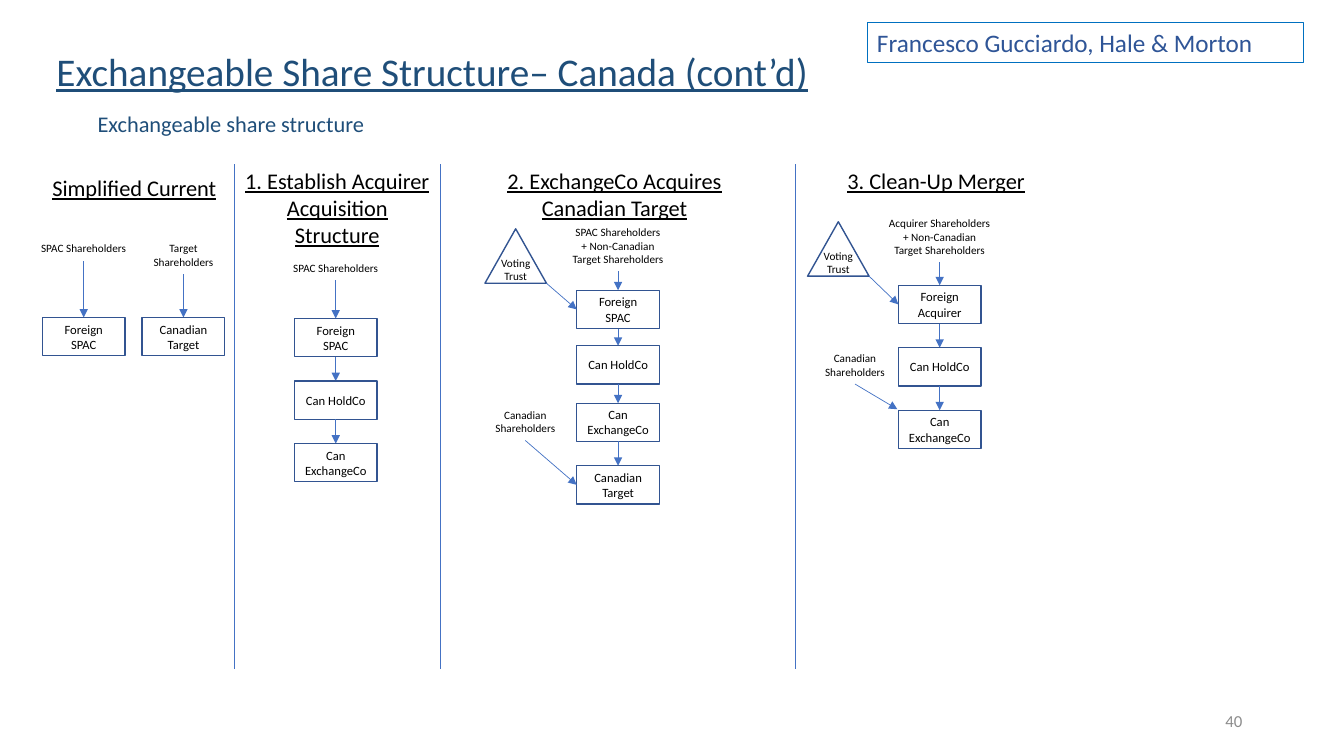
from lxml import etree
from pptx import Presentation
from pptx.dml.color import RGBColor
from pptx.enum.shapes import MSO_CONNECTOR, MSO_SHAPE
from pptx.enum.text import MSO_ANCHOR as Anchor, MSO_AUTO_SIZE as AutoSize, PP_ALIGN as Align
from pptx.oxml.ns import qn
from pptx.util import Inches, Pt

BLACK, NAVY, OUTLINE, ARROW = "000000", "1F4E79", "325491", "4472C4"
BOX_WIDTH, BOX_HEIGHT = 0.82, 0.38
TRUST_WIDTH, TRUST_HEIGHT = 0.61, 0.54

# Each flow: center, label top, label, boxes as (top, text)
FLOWS = [
    (0.83, 2.35, "SPAC Shareholders", [(3.15, "Foreign SPAC")]),
    (1.82, 2.35, "Target\nShareholders", [(3.15, "Canadian\nTarget")]),
    (3.33, 2.54, "SPAC Shareholders",
     [(3.16, "Foreign SPAC"), (3.78, "Can HoldCo"), (4.4, "Can ExchangeCo")]),
    (6.13, 2.19, "SPAC Shareholders\n+ Non-Canadian\nTarget Shareholders",
     [(2.88, "Foreign SPAC"), (3.43, "Can HoldCo"), (4, "Can ExchangeCo"),
      (4.62, "Canadian\nTarget")]),
    (9.32, 2.1, "Acquirer Shareholders\n+ Non-Canadian\nTarget Shareholders",
     [(2.83, "Foreign Acquirer"), (3.45, "Can HoldCo"), (4.07, "Can ExchangeCo")]),
]
# Each heading: left, top, width, height, text, alignment, wrap
HEADINGS = [
    (0.42, 1.68, 1.85, 0.37, "Simplified Current", Align.LEFT, False),
    (2.32, 1.61, 2.05, 0.91, "1. Establish Acquirer\nAcquisition Structure", Align.CENTER, True),
    (4.92, 1.61, 2.35, 0.64, "2. ExchangeCo Acquires\nCanadian Target", Align.CENTER, False),
    (8.27, 1.61, 2.03, 0.37, "3. Clean-Up Merger", Align.CENTER, False),
]
DIVIDERS = [2.32, 4.37, 7.89]
# Each trust: left, top, target point
TRUSTS = [(4.81, 2.27, (5.72, 3.07)), (8.01, 2.2, (8.91, 3.02))]
# Each group of Canadian shareholders: center, top, target point
CANADIANS = [(5.21, 4, (5.72, 4.81)), (8.48, 3.44, (8.9, 4.06))]


def color(value):
    return RGBColor.from_string(value)


class SlideBuilder:
    """Holds the slide and its text style."""

    def __init__(self, slide, font="Calibri"):
        self.slide = slide
        self.font = font

    def set_text(self, shape, text, size, ink=BLACK, align=Align.CENTER,
                 anchor=Anchor.TOP, underline=False, wrap=True, inset=None):
        frame = shape.text_frame
        frame.text = text
        frame.auto_size = AutoSize.NONE
        frame.word_wrap = wrap
        frame.vertical_anchor = anchor
        if inset is not None:
            frame.margin_left = frame.margin_right = Inches(inset)
            frame.margin_top = frame.margin_bottom = Inches(inset)
        for para in frame.paragraphs:
            para.alignment = align
            para.space_before = Pt(0)
            for span in para.runs:
                span.font.name = self.font
                span.font.size = Pt(size)
                span.font.underline = underline
                span.font.color.rgb = color(ink)

    def placeholder(self, index, left, top, width, height, text, size, **style):
        holder = self.slide.placeholders[index]
        holder.left, holder.top = Inches(left), Inches(top)
        holder.width, holder.height = Inches(width), Inches(height)
        self.set_text(holder, text, size, **style)
        return holder

    def subtitle(self, *place, **style):
        holder = self.placeholder(1, *place, **style)
        for properties in holder.element.iter(qn("a:pPr")):
            properties.set("marL", "0")
            properties.set("indent", "0")
            etree.SubElement(properties, qn("a:buNone"))

    def text(self, left, top, width, height, text, size, **style):
        box = self.slide.shapes.add_textbox(
            Inches(left), Inches(top), Inches(width), Inches(height))
        self.set_text(box, text, size, **style)

    def label(self, center, top, text, width=1.1):
        """Adds a small centered label and returns its bottom edge."""
        height = 0.11 + 0.13 * len(text.splitlines())
        self.text(center - width / 2, top, width, height, text, 8, wrap=False)
        return top + height

    def shape(self, kind, left, top, width, height, text, size,
              outline=OUTLINE, weight=1, **style):
        shape = self.slide.shapes.add_shape(
            kind, Inches(left), Inches(top), Inches(width), Inches(height))
        shape.shadow.inherit = False
        shape.fill.background()
        shape.line.color.rgb = color(outline)
        shape.line.width = Pt(weight)
        self.set_text(shape, text, size, **style)

    def line(self, start, end, arrow=True):
        points = [Inches(value) for value in (*start, *end)]
        connector = self.slide.shapes.add_connector(MSO_CONNECTOR.STRAIGHT, *points)
        connector.line.color.rgb = color(ARROW)
        connector.line.width = Pt(0.5)
        properties = connector.element.spPr
        if arrow:
            etree.SubElement(properties.find(qn("a:ln")), qn("a:tailEnd"), type="triangle")
        etree.SubElement(properties, qn("a:effectLst"))

    def flow(self, center, label_top, label, boxes):
        """Stacks boxes under a label, each reached by an arrow."""
        bottom = self.label(center, label_top, label)
        for top, text in boxes:
            self.line((center, bottom), (center, top))
            self.shape(MSO_SHAPE.RECTANGLE, center - BOX_WIDTH / 2, top,
                       BOX_WIDTH, BOX_HEIGHT, text, 9, anchor=Anchor.MIDDLE)
            bottom = top + BOX_HEIGHT


def main():
    deck = Presentation()
    deck.slide_width, deck.slide_height = Inches(13.33), Inches(7.5)
    page = SlideBuilder(deck.slides.add_slide(deck.slide_layouts[1]))

    # Title, subtitle, speaker and page number
    page.placeholder(0, 0.46, 0.42, 12.47, 0.57, "Exchangeable Share Structure– Canada (cont’d)",
                     28, ink=NAVY, align=Align.LEFT, underline=True)
    page.subtitle(0.48, 1.09, 3.62, 0.3, "Exchangeable share structure", 16, ink=NAVY, inset=0)
    page.shape(MSO_SHAPE.RECTANGLE, 8.6, 0.22, 4.33, 0.4, "Francesco Gucciardo, Hale & Morton",
               18, outline="0070C0", weight=0.75, ink="2F5597", align=Align.LEFT)
    page.text(9.42, 6.95, 3, 0.4, "40", 12, ink="8C8C8C",
              align=Align.RIGHT, anchor=Anchor.MIDDLE)

    # Column headings and dividers
    for *place, text, align, wrap in HEADINGS:
        page.text(*place, text, 16, align=align, wrap=wrap, underline=True)
    for x in DIVIDERS:
        page.line((x, 1.63), (x, 6.64), arrow=False)

    # Ownership flows
    for flow in FLOWS:
        page.flow(*flow)

    # Voting trusts and Canadian shareholders
    for left, top, target in TRUSTS:
        page.shape(MSO_SHAPE.ISOSCELES_TRIANGLE, left, top, TRUST_WIDTH, TRUST_HEIGHT,
                   "Voting\nTrust", 8, anchor=Anchor.MIDDLE, wrap=False, inset=0)
        page.line((left + TRUST_WIDTH, top + TRUST_HEIGHT), target)
    for center, top, target in CANADIANS:
        bottom = page.label(center, top, "Canadian\nShareholders", width=0.81)
        page.line((center, bottom), target)

    deck.save("out.pptx")


if __name__ == "__main__":
    main()
